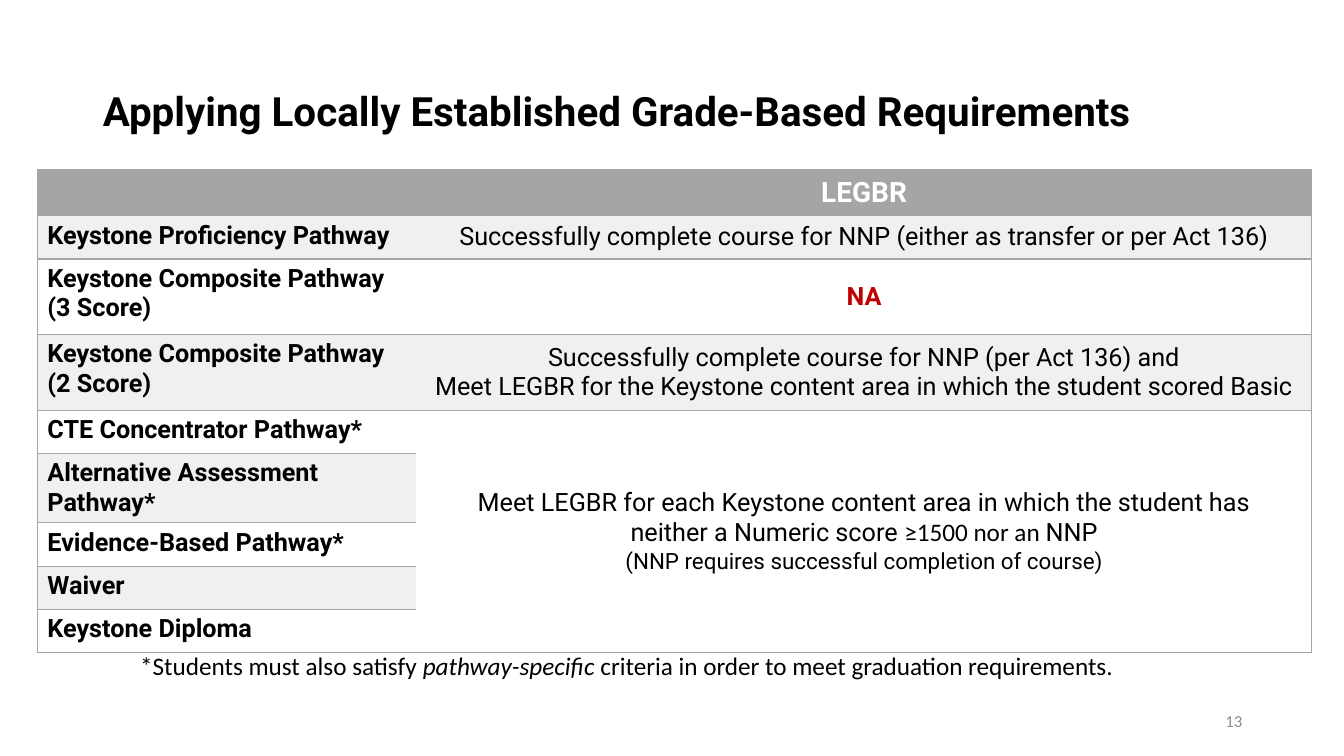
from lxml import etree
from pptx import Presentation
from pptx.dml.color import RGBColor
from pptx.enum.text import MSO_ANCHOR, PP_ALIGN
from pptx.oxml.ns import qn
from pptx.util import Inches, Pt

MID, TOP = MSO_ANCHOR.MIDDLE, MSO_ANCHOR.TOP
LEFT, MIDST, RIGHT = PP_ALIGN.LEFT, PP_ALIGN.CENTER, PP_ALIGN.RIGHT
HUES = {"black": "000000", "white": "FFFFFF", "gray": "A5A5A5",
        "band": "F0F0F0", "red": "C00000", "page": "8C8C8C"}

# Content: a cell is a list of paragraphs, a paragraph a list of (text, format) runs
BOLD = {"bold": True}
TITLE = [[("Applying Locally Established Grade-Based Requirements",
           {"size": 28.8, "bold": True})]]
PATHS = [
    [],
    ["Keystone Proficiency Pathway"],
    ["Keystone Composite Pathway", "(3 Score)"],
    ["Keystone Composite Pathway", "(2 Score)"],
    ["CTE Concentrator Pathway*"],
    ["Alternative Assessment Pathway*"],
    ["Evidence-Based Pathway*"],
    ["Waiver"],
    ["Keystone Diploma"],
]
RULES = [
    [[("LEGBR", {"size": 20, "bold": True, "hue": "white"})]],
    [[("Successfully complete course for NNP (either as transfer or per Act 136)", {})]],
    [[("NA", {"bold": True, "hue": "red"})]],
    [[("Successfully complete course for NNP (per Act 136) and", {})],
     [("Meet LEGBR for the Keystone content area in which the student scored Basic", {})]],
    [[("Meet LEGBR for each Keystone content area in which the student has", {})],
     [("neither a Numeric score ", {}), ("≥1500 nor an ", {"font": "Calibri"}), ("NNP", {})],
     [("(NNP requires successful completion of course)", {"size": 16})]],
]
BODY = {"font": "Calibri"}
NOTE = [[("*Students must also satisfy ", BODY),
         ("pathway-specific", {"font": "Calibri", "italic": True}),
         (" criteria in order to meet graduation requirements.", BODY)]]
PAGE = [[("13", {"size": 12, "font": "Calibri", "hue": "page"})]]
WIDTHS = [3.76, 8.88]
HEIGHTS = [0.46, 0.43, 0.75, 0.75] + [0.43] * 5
MERGE = 4  # first row of the merged right-hand cell


def color(name):
    return RGBColor.from_string(HUES[name])


def write(frame, paras, align):
    for i, runs in enumerate(paras):
        para = frame.paragraphs[0] if i == 0 else frame.add_paragraph()
        para.alignment = align
        for text, look in runs:
            run = para.add_run()
            run.text = text
            font = run.font
            font.name = look.get("font", "Roboto")
            font.size = Pt(look.get("size", 18))
            font.bold = look.get("bold", False)
            font.italic = look.get("italic", False)
            font.color.rgb = color(look.get("hue", "black"))


def edge(cell, shown):
    props = cell._tc.get_or_add_tcPr()
    for i, side in enumerate("LRTB"):
        line = etree.Element(qn(f"a:ln{side}"), w=str(Pt(1)))
        if side in shown:
            fill = etree.SubElement(line, qn("a:solidFill"))
            etree.SubElement(fill, qn("a:srgbClr"), val=HUES["gray"])
        else:
            etree.SubElement(line, qn("a:noFill"))
        props.insert(i, line)


def label(slide, box, paras, align, anchor):
    frame = slide.shapes.add_textbox(*map(Inches, box)).text_frame
    frame.word_wrap = True
    frame.vertical_anchor = anchor
    write(frame, paras, align)


deck = Presentation()
deck.slide_width, deck.slide_height = Inches(13.33), Inches(7.5)
slide = deck.slides.add_slide(deck.slide_layouts[5])

# Title
title = slide.shapes.title
title.left, title.top, title.width, title.height = map(Inches, (0.92, 0.4, 11.5, 1.4))
title.text_frame.vertical_anchor = MID
write(title.text_frame, TITLE, LEFT)

# Table
table = slide.shapes.add_table(
    len(HEIGHTS), 2, Inches(0.37), Inches(1.68),
    Inches(sum(WIDTHS)), Inches(sum(HEIGHTS))).table
table.first_row = table.horz_banding = False
for col, wide in zip(table.columns, WIDTHS):
    col.width = Inches(wide)
for r, high in enumerate(HEIGHTS):
    table.rows[r].height = Inches(high)
    band = "gray" if r == 0 else "band" if r % 2 else "white"
    for c, shown in enumerate(("LTB", "RTB")):
        cell = table.cell(r, c)
        cell.fill.solid()
        cell.fill.fore_color.rgb = color("white" if c and r >= MERGE else band)
        edge(cell, shown)
        cell.vertical_anchor = MID if c else TOP
    write(table.cell(r, 0).text_frame, [[(text, BOLD)] for text in PATHS[r]], LEFT)
table.cell(MERGE, 1).merge(table.cell(len(HEIGHTS) - 1, 1))
for r, paras in enumerate(RULES):
    write(table.cell(r, 1).text_frame, paras, MIDST)

# Page number and footnote
label(slide, (9.42, 6.95, 3, 0.4), PAGE, RIGHT, MID)
label(slide, (0.37, 6.4, 11.69, 0.4), NOTE, MIDST, TOP)

deck.save("out.pptx")
